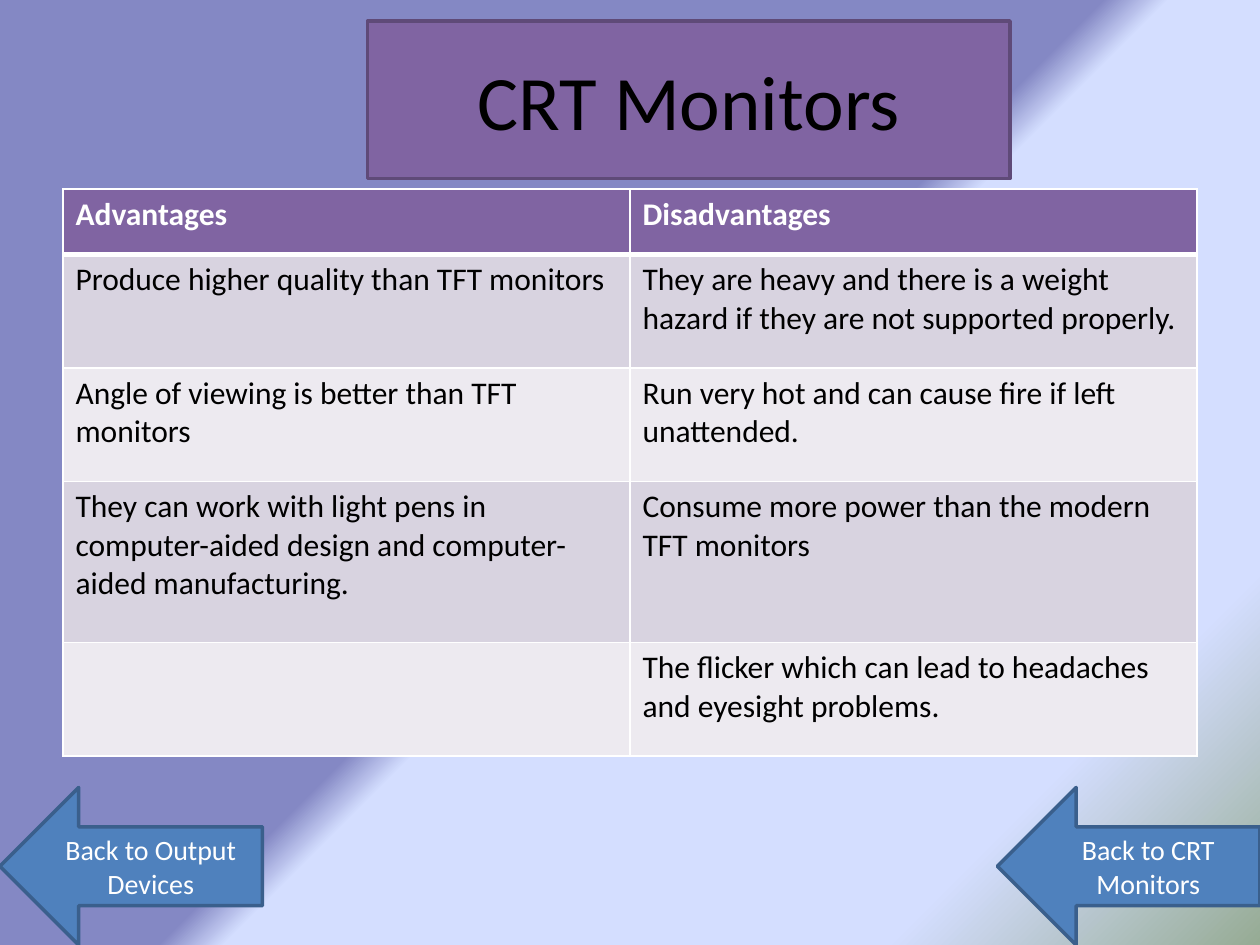
from pptx import Presentation, oxml
from pptx import util as u
from pptx.dml.color import RGBColor
from pptx.enum import shapes, text
from pptx.oxml import ns

WIDE, HIGH = u.Inches(10), u.Inches(7.5)
FONT = "Calibri"
HUES = {
    "plum": "8064A2", "plum edge": "5F4A78", "dark band": "D8D3E0",
    "light band": "EDEAF0", "blue": "4F81BD", "blue edge": "3A5F8C",
    "white": "FFFFFF", "black": "000000",
    "violet": "8488C4", "sky": "D4DEFF", "sage": "96AB94",
}
STOPS = [(50, "violet"), (53, "sky"), (83, "sky"), (100, "sage")]
ROWS = [
    ("Advantages", "Disadvantages"),
    ("Produce higher quality than TFT monitors",
     "They are heavy and there is a weight hazard if they are not supported properly."),
    ("Angle of viewing is better than TFT monitors",
     "Run very hot and can cause fire if left unattended."),
    ("They can work with light pens in computer-aided design and computer-aided manufacturing.",
     "Consume more power than the modern TFT monitors"),
    ("", "The flicker which can lead to headaches and eyesight problems."),
]
TALL = [0.52, 0.9, 0.9, 1.28, 0.9]


def tint(name):
    return RGBColor.from_string(HUES[name])


def place(left, top, wide, high):
    return [int(WIDE * left), int(HIGH * top), int(WIDE * wide), int(HIGH * high)]


def write(frame, words, size, hue, bold=False):
    run = frame.paragraphs[0].add_run()
    run.text = words
    font = run.font
    font.name, font.size, font.bold = FONT, u.Pt(size), bold
    font.color.rgb = tint(hue)


def paint(slide):
    stops = "".join(
        f'<a:gs pos="{pos * 1000}"><a:srgbClr val="{HUES[hue]}"/></a:gs>'
        for pos, hue in STOPS)
    grad = oxml.parse_xml(
        f'<a:gradFill {ns.nsdecls("a")} rotWithShape="1"><a:gsLst>{stops}</a:gsLst>'
        '<a:lin ang="2700000" scaled="0"/></a:gradFill>')
    back = slide.background
    back.fill.background()
    holder = slide.element.cSld.bg.bgPr
    holder.replace(holder.find(ns.qn("a:noFill")), grad)


def block(slide, kind, spot, hue, words, size, ink):
    shape = slide.shapes.add_shape(kind, *spot)
    shape.shadow.inherit = False
    shape.fill.solid()
    shape.fill.fore_color.rgb = tint(hue)
    shape.line.color.rgb = tint(hue + " edge")
    shape.line.width = u.Pt(2)
    frame = shape.text_frame
    frame.word_wrap = True
    frame.vertical_anchor = text.MSO_ANCHOR.MIDDLE
    frame.paragraphs[0].alignment = text.PP_ALIGN.CENTER
    write(frame, words, size, ink)
    return shape


def arrow(slide, left, words):
    spot = place(left, 5 / 6, 5 / 24, 1 / 6)
    shape = block(slide, shapes.MSO_SHAPE.RIGHT_ARROW, spot, "blue", words, 16, "white")
    shape.element.spPr.xfrm.set("flipH", "1")


def edge(cell, top, base):
    props = cell._tc.get_or_add_tcPr()
    for at, (side, width) in enumerate(zip("LRTB", (1, 1, top, base))):
        props.insert(at, oxml.parse_xml(
            f'<a:ln{side} {ns.nsdecls("a")} w="{u.Pt(width)}"><a:solidFill>'
            f'<a:srgbClr val="{HUES["white"]}"/></a:solidFill></a:ln{side}>'))


def grid(slide):
    spot = place(0.05, 0.2, 0.9, 0.6)
    table = slide.shapes.add_table(len(ROWS), len(ROWS[0]), *spot).table
    for row, words in enumerate(ROWS):
        table.rows[row].height = u.Inches(TALL[row])
        head = row == 0
        hue = "plum" if head else ("light band", "dark band")[row % 2]
        for col, word in enumerate(words):
            cell = table.cell(row, col)
            cell.fill.solid()
            cell.fill.fore_color.rgb = tint(hue)
            edge(cell, 3 if row == 1 else 1, 3 if head else 1)
            if word:
                write(cell.text_frame, word, 18, "white" if head else "black", head)


def main():
    deck = Presentation()
    deck.slide_width, deck.slide_height = WIDE, HIGH
    slide = deck.slides.add_slide(deck.slide_layouts[6])
    paint(slide)
    block(slide, shapes.MSO_SHAPE.RECTANGLE, place(7 / 24, 1 / 45, 0.51, 1 / 6),
          "plum", "CRT Monitors", 44, "black")
    grid(slide)
    arrow(slide, 0, "Back to Output Devices")
    arrow(slide, 19 / 24, "Back to CRT Monitors")
    deck.save("out.pptx")


if __name__ == "__main__":
    main()
